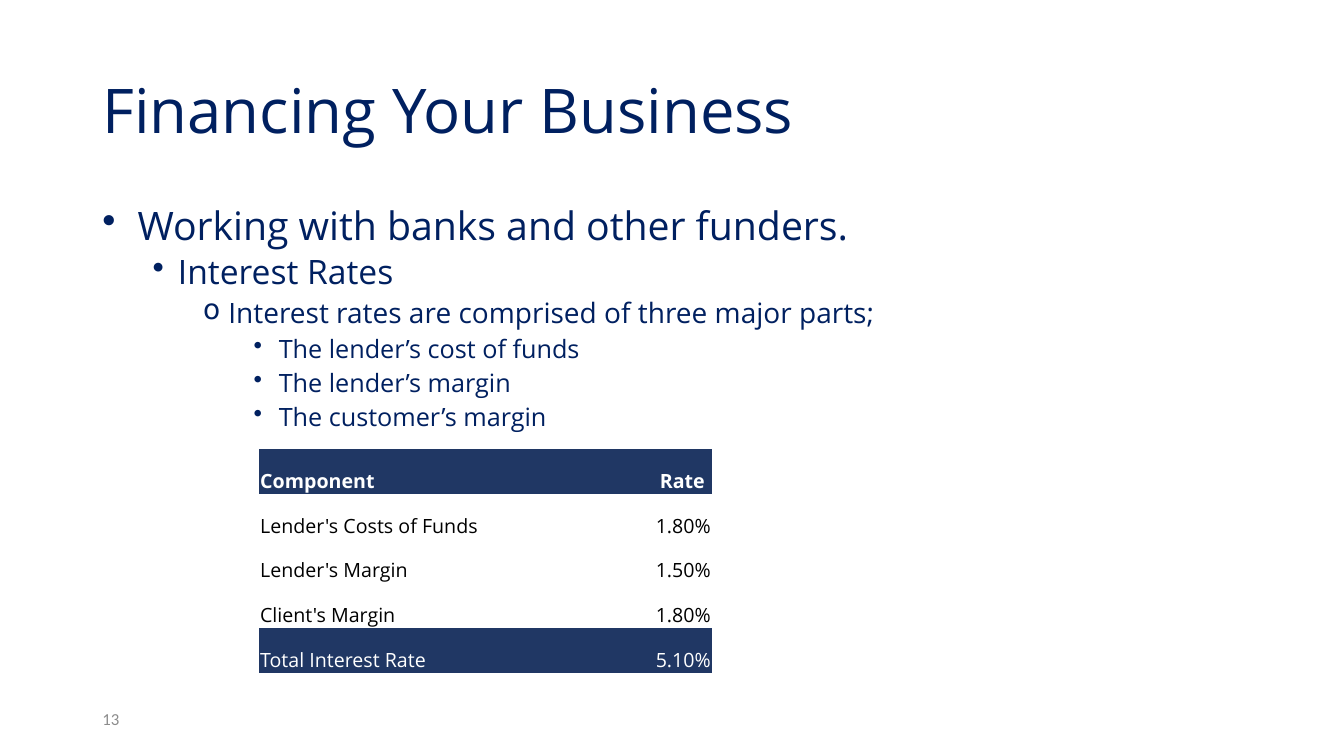
"""Build the interest rate slide about financing a business."""
import dataclasses
import typing

import lxml.etree
import pptx
import pptx.dml.color
import pptx.enum.text
import pptx.oxml.ns
import pptx.util

NAVY = pptx.dml.color.RGBColor(0x00, 0x20, 0x60)
BAND = pptx.dml.color.RGBColor(0x20, 0x37, 0x64)
WHITE = pptx.dml.color.RGBColor(0xFF, 0xFF, 0xFF)
BLACK = pptx.dml.color.RGBColor(0x00, 0x00, 0x00)
GREY = pptx.dml.color.RGBColor(0x8C, 0x8C, 0x8C)

GRID_COLUMNS, GRID_ROWS = 160, 90
SLIDE_WIDTH, SLIDE_HEIGHT = pptx.util.Inches(13.33), pptx.util.Inches(7.5)
PLAIN_TABLE_STYLE = "{2D5ABB26-0587-4C30-8999-92F81FD0307C}"
ANCHOR = pptx.enum.text.MSO_ANCHOR
ALIGN = pptx.enum.text.PP_ALIGN


@dataclasses.dataclass(frozen=True)
class Area:
    left: float
    top: float
    width: float
    height: float


@dataclasses.dataclass(frozen=True)
class Point:
    text: str
    level: int
    size: int
    mark: str = "•"
    hang: float = 0.25


@dataclasses.dataclass(frozen=True)
class RateRow:
    component: str
    rate: str
    color: pptx.dml.color.RGBColor = BLACK
    bold: bool = False
    banded: bool = False
    right_inset: float = 0.01


TITLE_AREA = Area(11, 4.8, 138, 17.4)
POINTS_AREA = Area(11, 24, 138, 57.1)
NUMBER_AREA = Area(11, 83.2, 36, 4.8)
TABLE_AREA = Area(30.85, 53.5, 53.9, 26.65)
COMPONENT_SHARE = 0.7

POINTS = [
    Point("Working with banks and other funders.", 0, 28, hang=0.35),
    Point("Interest Rates", 1, 24),
    Point("Interest rates are comprised of three major parts;", 2, 20, "o"),
    Point("The lender’s cost of funds", 3, 18),
    Point("The lender’s margin", 3, 18),
    Point("The customer’s margin", 3, 18),
]

RATES = [
    RateRow("Component", "Rate", WHITE, bold=True, banded=True, right_inset=0.07),
    RateRow("Lender's Costs of Funds", "1.80%"),
    RateRow("Lender's Margin", "1.50%"),
    RateRow("Client's Margin", "1.80%"),
    RateRow("Total Interest Rate", "5.10%", WHITE, banded=True),
]


def across(columns: float) -> int:
    """Return the length of a number of grid columns."""
    return round(SLIDE_WIDTH * columns / GRID_COLUMNS)


def down(rows: float) -> int:
    """Return the length of a number of grid rows."""
    return round(SLIDE_HEIGHT * rows / GRID_ROWS)


def place(area: Area) -> tuple[int, int, int, int]:
    """Return left, top, width and height of an area."""
    return across(area.left), down(area.top), across(area.width), down(area.height)


def apply(target: typing.Any, values: dict[str, typing.Any]) -> None:
    """Set each named value on the target."""
    for name, value in values.items():
        setattr(target, name, value)


def write(para: typing.Any, text: str, size: int, color: pptx.dml.color.RGBColor,
          face: str = "Open Sans", bold: bool = False) -> None:
    """Add a formatted span of text to a paragraph."""
    span = para.add_run()
    span.text = text
    apply(span.font, {"name": face, "size": pptx.util.Pt(size), "bold": bold})
    span.font.color.rgb = color


def add_title(page: typing.Any, text: str) -> None:
    """Place and fill the title placeholder."""
    box = page.shapes.title
    apply(box, dict(zip(("left", "top", "width", "height"), place(TITLE_AREA))))
    apply(box.text_frame, {"vertical_anchor": ANCHOR.MIDDLE, "word_wrap": True,
                           "auto_size": pptx.enum.text.MSO_AUTO_SIZE.NONE})
    para = box.text_frame.paragraphs[0]
    apply(para, {"alignment": ALIGN.LEFT, "line_spacing": 0.9})
    write(para, text, 44, NAVY)


def add_frame(page: typing.Any, area: Area, anchor: ANCHOR) -> typing.Any:
    """Add a wrapping text box and return its text frame."""
    frame = page.shapes.add_textbox(*place(area)).text_frame
    apply(frame, {"word_wrap": True, "vertical_anchor": anchor})
    return frame


def add_points(page: typing.Any, points: list[Point]) -> None:
    """Add the bulleted outline."""
    frame = add_frame(page, POINTS_AREA, ANCHOR.TOP)
    for index, point in enumerate(points):
        para = frame.add_paragraph() if index else frame.paragraphs[0]
        apply(para, {"level": point.level, "line_spacing": 0.9,
                     "space_before": pptx.util.Pt(5 if index else 0)})
        properties = para._p.get_or_add_pPr()
        hang = pptx.util.Inches(point.hang)
        properties.set("marL", str(pptx.util.Inches(point.level * 0.5) + hang))
        properties.set("indent", str(-hang))
        mark = lxml.etree.SubElement(properties, pptx.oxml.ns.qn("a:buChar"))
        mark.set("char", point.mark)
        write(para, point.text, point.size, NAVY)


def add_rates(page: typing.Any, rates: list[RateRow]) -> None:
    """Add the table of interest rate components."""
    table = page.shapes.add_table(len(rates), 2, *place(TABLE_AREA)).table
    apply(table, {"first_row": False, "horz_banding": False})
    table._tbl.tblPr.find(pptx.oxml.ns.qn("a:tableStyleId")).text = PLAIN_TABLE_STYLE
    for column, share in zip(table.columns, (COMPONENT_SHARE, 1 - COMPONENT_SHARE)):
        column.width = across(TABLE_AREA.width * share)
    for row, rate in zip(table.rows, rates):
        row.height = down(TABLE_AREA.height / len(rates))
        entries = ((rate.component, ALIGN.LEFT, 0.01),
                   (rate.rate, ALIGN.RIGHT, rate.right_inset))
        for cell, (text, alignment, right_inset) in zip(row.cells, entries):
            apply(cell, {"vertical_anchor": ANCHOR.BOTTOM, "margin_bottom": 0,
                         "margin_left": pptx.util.Inches(0.01),
                         "margin_top": pptx.util.Inches(0.01),
                         "margin_right": pptx.util.Inches(right_inset)})
            if rate.banded:
                cell.fill.solid()
                cell.fill.fore_color.rgb = BAND
            else:
                cell.fill.background()
            para = cell.text_frame.paragraphs[0]
            para.alignment = alignment
            write(para, text, 14, rate.color, bold=rate.bold)


def main() -> None:
    """Create and save the deck."""
    deck = pptx.Presentation()
    apply(deck, {"slide_width": SLIDE_WIDTH, "slide_height": SLIDE_HEIGHT})
    page = deck.slides.add_slide(deck.slide_layouts.get_by_name("Title Only"))
    add_title(page, "Financing Your Business")
    add_points(page, POINTS)
    number = add_frame(page, NUMBER_AREA, ANCHOR.MIDDLE)
    write(number.paragraphs[0], "13", 12, GREY, face="Calibri")
    add_rates(page, RATES)
    deck.save("out.pptx")


if __name__ == "__main__":
    main()
